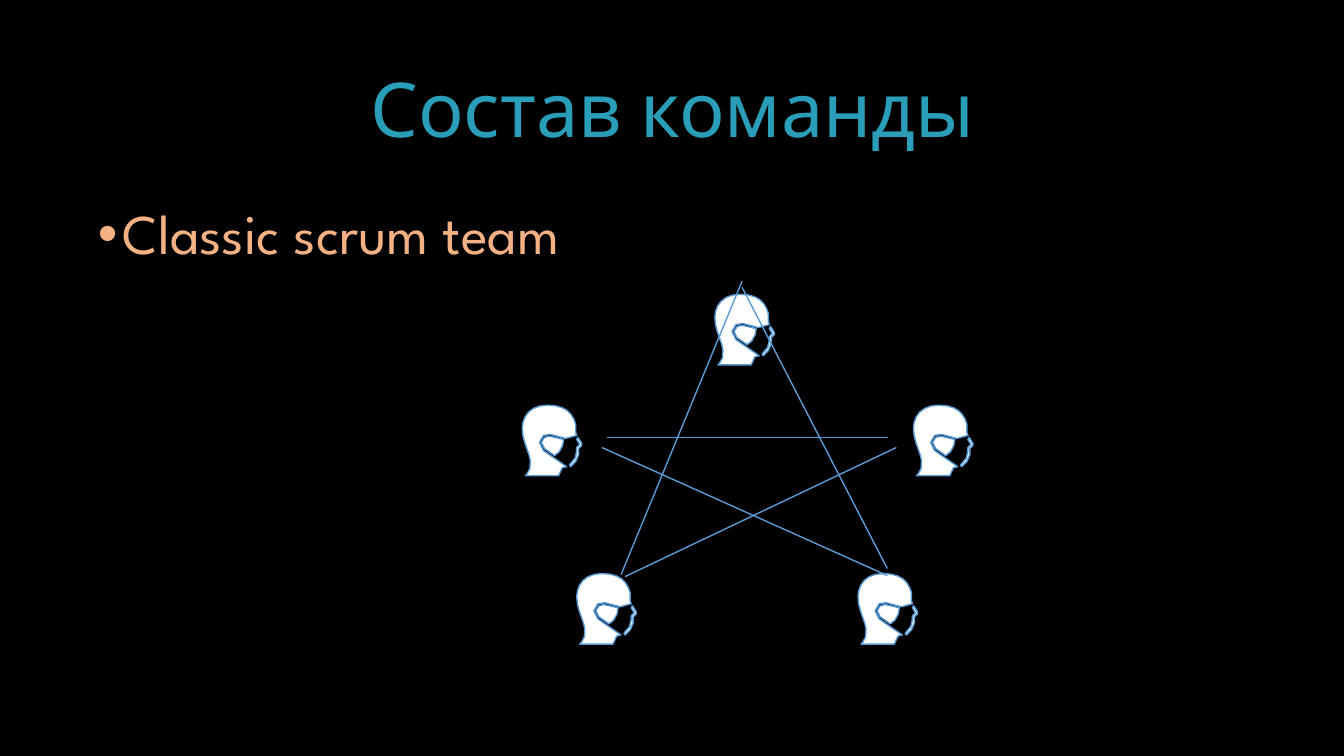
from math import dist

from lxml.etree import SubElement
from pptx import Presentation
from pptx.dml.color import RGBColor
from pptx.enum.shapes import MSO_CONNECTOR as CONN
from pptx.enum.text import MSO_ANCHOR as ANCHOR, MSO_AUTO_SIZE as AUTOSIZE, PP_ALIGN as ALIGN
from pptx.oxml.ns import qn
from pptx.util import Inches, Pt

# Masked head in hundredths of an inch: a start point, then lines (2 numbers)
# and Bezier curves (6 numbers)
HEAD = [
    [(25, 0), (8, 0, 0, 11, 0, 23), (0, 36, 7, 46, 8, 55), (10, 64, 3, 70, 3, 70),
     (36, 70), (38, 61, 41, 61, 44, 61), (21, 45), (18, 43, 17, 40, 17, 37),
     (17, 34, 19, 32, 21, 30), (23, 29, 26, 28, 28, 29), (43, 33), (54, 30),
     (54, 29, 53, 28, 53, 27), (51, 24, 54, 23, 53, 19), (50, 8, 43, 0, 25, 0)],
    [(26, 31), (25, 31, 23, 31, 22, 32), (21, 33, 20, 35, 19, 37),
     (19, 39, 20, 42, 22, 43), (32, 50), (36, 48, 38, 45, 40, 40),
     (41, 38, 41, 36, 41, 34), (28, 31)],
    [(55, 32), (54, 33, 54, 33, 54, 34), (57, 39), (54, 42), (54, 43, 55, 54, 47, 59),
     (46, 59, 46, 60, 47, 60), (48, 61), (52, 58, 55, 54, 56, 49),
     (56, 46, 56, 44, 56, 43), (59, 40), (59, 38), (56, 33)],
]
MEMBERS = [(7.09, 2.92), (5.72, 5.69), (8.51, 5.69), (5.18, 4.02), (9.06, 4.02)]
LINKS = [(6.16, 5.7, 7.36, 2.79), (8.8, 5.64, 7.36, 2.85), (5.97, 4.44, 8.8, 5.71),
         (6.02, 4.34, 8.81, 4.34), (6.2, 5.72, 8.89, 4.44)]


def color(value):
    return RGBColor.from_string(value)


def trace(contour):
    """Points of a contour; longer curves are sampled more finely."""
    points = [contour[0]]
    for seg in contour[1:]:
        if len(seg) == 2:
            points.append(seg)
            continue
        x0, y0 = points[-1]
        x1, y1, x2, y2, x3, y3 = seg
        steps = max(1, round(dist((x0, y0), (x3, y3)) / 6))
        for i in range(1, steps + 1):
            t = i / steps
            u = 1 - t
            a, b, c, d = u ** 3, 3 * u * u * t, 3 * u * t * t, t ** 3
            points.append((a * x0 + b * x1 + c * x2 + d * x3,
                           a * y0 + b * y1 + c * y2 + d * y3))
    return [(Inches(x / 100), Inches(y / 100)) for x, y in points]


class TeamSlide:
    font, back, title_color, text_color = "League Spartan", "000000", "2A9DB8", "F4B183"
    head_color, line_color, line_width = "FFFFFF", "5B9BD5", 1

    def __init__(self, prs):
        self.s = prs.slides.add_slide(prs.slide_layouts[5])
        fill = self.s.background.fill
        fill.solid()
        fill.fore_color.rgb = color(self.back)

    def text(self, sp, box, text, size, hue, anchor, **para):
        sp.left, sp.top, sp.width, sp.height = map(Inches, box)
        tf = sp.text_frame
        frame = dict(word_wrap=True, auto_size=AUTOSIZE.NONE, vertical_anchor=anchor)
        frame.update({f"margin_{side}": Inches(0.05)
                      for side in ("left", "right", "top", "bottom")})
        p = tf.paragraphs[0]
        r = p.add_run()
        r.text = text
        for obj, values in ((tf, frame), (p, dict(line_spacing=0.9, **para)),
                            (r.font, dict(name=self.font, size=Pt(size)))):
            for key, value in values.items():
                setattr(obj, key, value)
        r.font.color.rgb = color(hue)
        return p

    def title(self, box, text):
        self.text(self.s.shapes.title, box, text, 54, self.title_color,
                  ANCHOR.MIDDLE, alignment=ALIGN.CENTER)

    def bullet(self, box, text):
        sp = self.s.shapes.add_textbox(0, 0, 0, 0)
        p = self.text(sp, box, text, 40, self.text_color, ANCHOR.TOP,
                      alignment=ALIGN.LEFT, space_before=Pt(10))
        pPr = p._p.get_or_add_pPr()
        pPr.set("marL", str(Inches(0.25)))
        pPr.set("indent", str(Inches(-0.25)))
        SubElement(pPr, qn("a:buFont")).set("typeface", "Arial")
        SubElement(pPr, qn("a:buChar")).set("char", "•")

    def outline(self, line):
        line.color.rgb = color(self.line_color)
        line.width = Pt(self.line_width)

    def head(self, left, top):
        first, *others = map(trace, HEAD)
        builder = self.s.shapes.build_freeform(*first[0])
        builder.add_line_segments(first[1:], close=True)
        for points in others:
            builder.move_to(*points[0])
            builder.add_line_segments(points[1:], close=True)
        sp = builder.convert_to_shape(Inches(left), Inches(top))
        sp.shadow.inherit = False
        sp.fill.solid()
        sp.fill.fore_color.rgb = color(self.head_color)
        self.outline(sp.line)

    def link(self, *ends):
        cxn = self.s.shapes.add_connector(CONN.STRAIGHT, *map(Inches, ends))
        self.outline(cxn.line)
        SubElement(cxn._element.spPr, qn("a:effectLst"))


def main():
    prs = Presentation()
    prs.slide_width, prs.slide_height = Inches(13.33), Inches(7.5)
    slide = TeamSlide(prs)

    # Heading and bullet
    slide.title((0.92, 0.4, 11.5, 1.45), "Состав команды")
    slide.bullet((0.92, 2, 11.5, 4.76), "Classic scrum team")

    # Team members and the star that links them
    for place in MEMBERS:
        slide.head(*place)
    for ends in LINKS:
        slide.link(*ends)

    prs.save("out.pptx")


if __name__ == "__main__":
    main()
